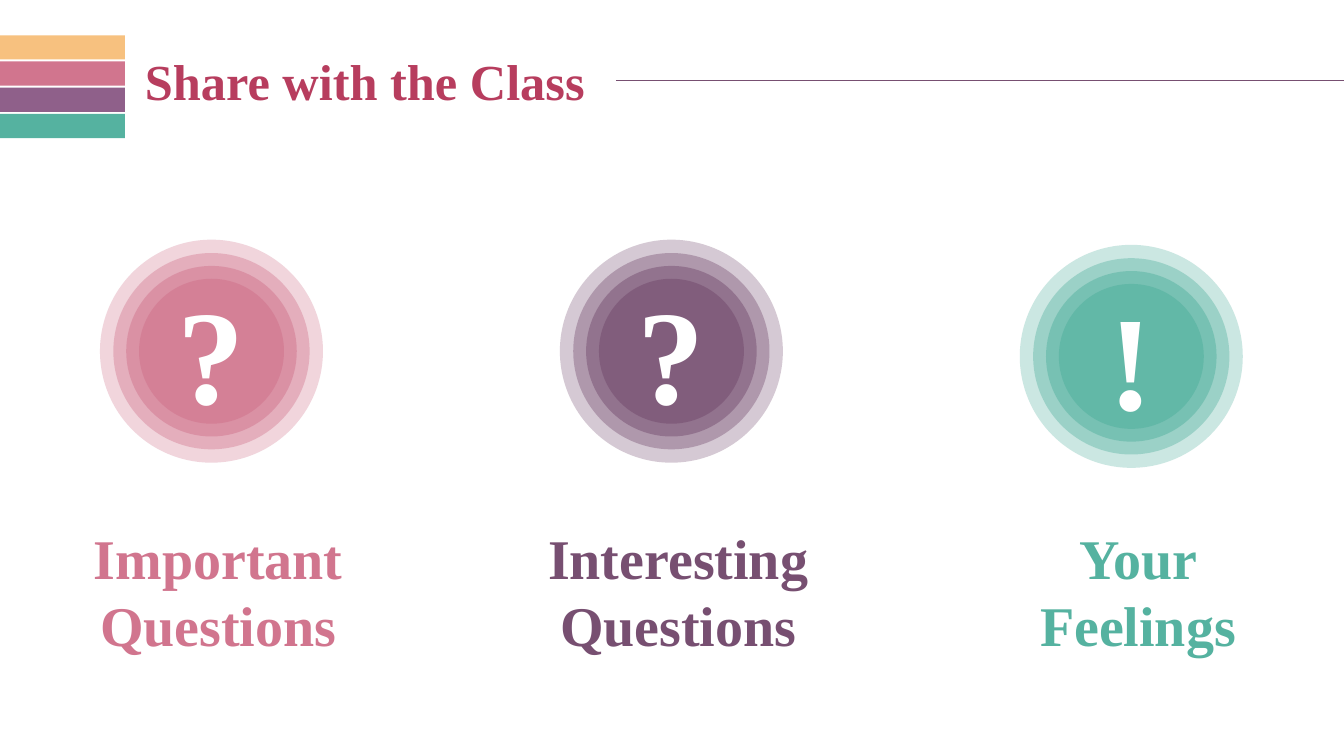
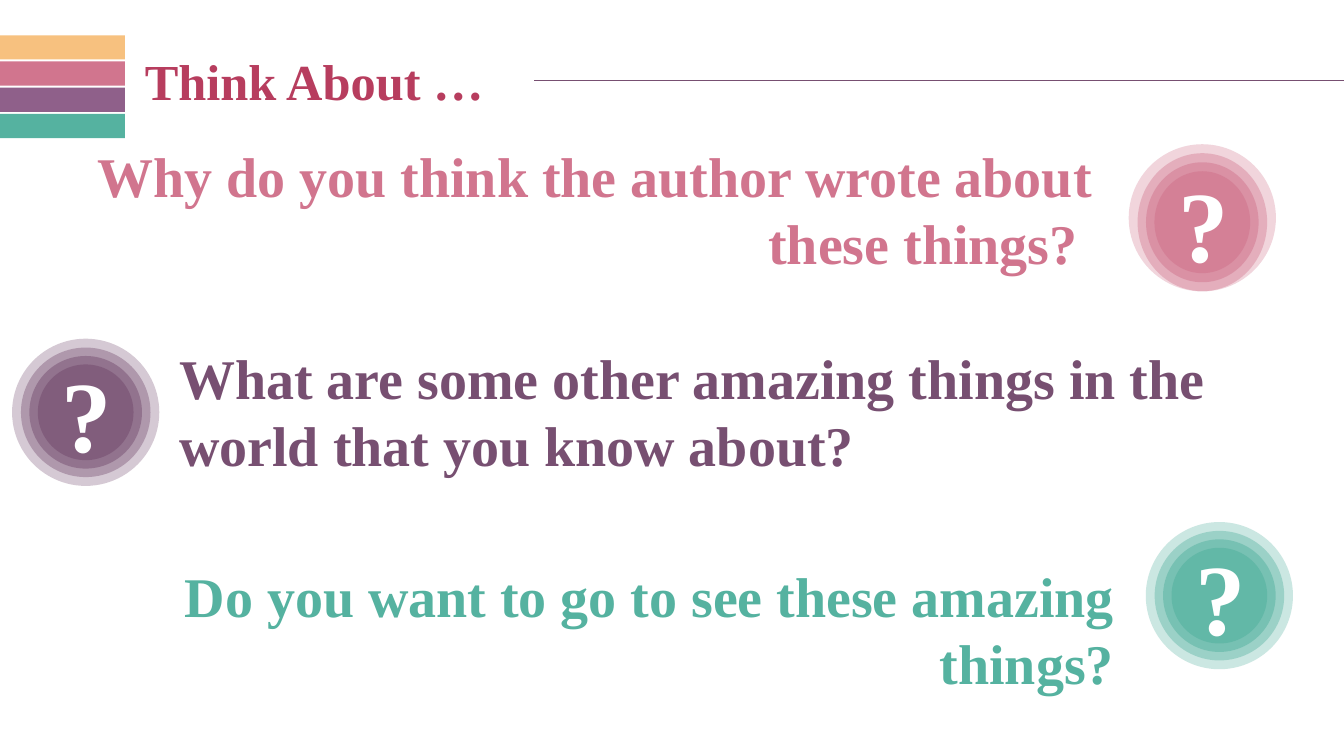
import lxml.etree
import pptx
import pptx.dml.color
import pptx.enum.shapes
import pptx.enum.text
import pptx.oxml.ns
import pptx.util

Cm = pptx.util.Cm
RGBColor = pptx.dml.color.RGBColor
SHAPE = pptx.enum.shapes.MSO_SHAPE
ALIGN = pptx.enum.text.PP_ALIGN
ANCHOR = pptx.enum.text.MSO_ANCHOR
qn = pptx.oxml.ns.qn

FONT = "Times New Roman"
WHITE = RGBColor(0xFF, 0xFF, 0xFF)
CRIMSON = RGBColor(0xB7, 0x3D, 0x5E)
ORANGE = RGBColor(0xF7, 0xC1, 0x7F)
PINK = RGBColor(0xD1, 0x75, 0x8E)
LILAC = RGBColor(0x8F, 0x60, 0x8A)
PURPLE = RGBColor(0x77, 0x4F, 0x71)
TEAL = RGBColor(0x55, 0xB2, 0xA0)

# All lengths are in centimetres.
SLIDE_WIDTH, SLIDE_HEIGHT = 33.87, 19.05
STRIPES = [ORANGE, PINK, LILAC, TEAL]
STRIPE_TOP, STRIPE_WIDTH, STRIPE_HEIGHT, STRIPE_PITCH = 0.89, 3.15, 0.61, 0.66
TITLE_LEFT, TITLE_TOP, TITLE_HEIGHT, RULE_TOP = 3.4, 1.14, 1.8, 2.03
RINGS = [(1, 30), (0.88, 40), (0.765, 50), (0.65, 60)]  # scale, opacity in percent

SHARE_TITLE, SHARE_TITLE_WIDTH = "Share with the Class", 12.12
SHARE_TOPICS = [  # caption, mark, colour, centre height of the badge
    ("Important Questions", "?", PINK, 8.85),
    ("Interesting Questions", "?", PURPLE, 8.85),
    ("Your Feelings", "!", TEAL, 8.98),
]
FIRST_CENTRE, COLUMN_PITCH, SHARE_DIAMETER = 5.33, 11.59, 5.62
CAPTION_SHIFT, CAPTION_TOP, CAPTION_WIDTH, CAPTION_HEIGHT = 0.17, 13.06, 8.1, 3.68

THINK_TITLE, THINK_TITLE_WIDTH = "Think About …", 10.06
THINK_DIAMETER = 3.71
THINK_QUESTIONS = [
    dict(text="Why do you think the author wrote about these things? ",
         color=PINK, align=ALIGN.RIGHT, box=(1.09, 3.43, 26.67, 3.68),
         centre=(30.3, 5.49), stretch=1.065, drop=0.11),
    dict(text="What are some other amazing things in the world that you know about?",
         color=PURPLE, align=ALIGN.LEFT, box=(4.27, 8.53, 29.6, 3.68),
         centre=(2.16, 10.39), stretch=1, drop=0),
    dict(text="Do you want to go to see these amazing things?",
         color=TEAL, align=ALIGN.RIGHT, box=(0, 14.02, 28.32, 1.96),
         centre=(30.73, 15.01), stretch=1, drop=0),
]


def write_text(frame, text, *, size, color, align=ALIGN.LEFT, anchor=ANCHOR.TOP):
    frame.word_wrap = True
    frame.vertical_anchor = anchor
    para = frame.paragraphs[0]
    para.alignment = align
    span = para.add_run()
    span.text = text
    span.font.name = FONT
    span.font.size = pptx.util.Pt(size)
    span.font.bold = True
    span.font.color.rgb = color


def add_text(page, text, bounds, **text_format):
    box = page.shapes.add_textbox(*map(Cm, bounds))
    box.text_frame.auto_size = pptx.enum.text.MSO_AUTO_SIZE.SHAPE_TO_FIT_TEXT
    write_text(box.text_frame, text, **text_format)


def add_plain_shape(shapes, kind, bounds, color, opacity=100):
    shape = shapes.add_shape(kind, *map(Cm, bounds))
    shape.shadow.inherit = False
    shape.line.fill.background()
    shape.fill.solid()
    shape.fill.fore_color.rgb = color
    if opacity < 100:
        fill_color = shape.element.spPr.find(".//" + qn("a:srgbClr"))
        lxml.etree.SubElement(fill_color, qn("a:alpha"), val=str(opacity * 1000))
    return shape


def add_heading(page, title, title_width):
    """Draw the stripes, the title and the rule that runs from it to the slide edge."""
    add_text(page, title, (TITLE_LEFT, TITLE_TOP, title_width, TITLE_HEIGHT),
             size=36, color=CRIMSON)
    stripes = page.shapes.add_group_shape().shapes
    for row, color in enumerate(STRIPES):
        bounds = (0, STRIPE_TOP + row * STRIPE_PITCH, STRIPE_WIDTH, STRIPE_HEIGHT)
        add_plain_shape(stripes, SHAPE.RECTANGLE, bounds, color)
    rule = page.shapes.add_connector(
        pptx.enum.shapes.MSO_CONNECTOR.STRAIGHT,
        Cm(TITLE_LEFT + title_width), Cm(RULE_TOP), Cm(SLIDE_WIDTH), Cm(RULE_TOP))
    rule.line.color.rgb = PURPLE
    rule.line.width = pptx.util.Pt(0.5)
    lxml.etree.SubElement(rule.element.spPr, qn("a:effectLst"))


def add_badge(page, mark, centre, diameter, *, color, size, stretch=1, drop=0):
    """Draw nested rings; stretch and drop make the inner ones taller and lower."""
    rings = page.shapes.add_group_shape().shapes
    for index, (scale, opacity) in enumerate(RINGS):
        width = height = diameter * scale
        x, y = centre
        if index > 0:
            height *= stretch
            y += drop
        bounds = (x - width / 2, y - height / 2, width, height)
        ring = add_plain_shape(rings, SHAPE.OVAL, bounds, color, opacity)
    write_text(ring.text_frame, mark, size=size, color=WHITE,
               align=ALIGN.CENTER, anchor=ANCHOR.MIDDLE)


def build_share_page(page):
    add_heading(page, SHARE_TITLE, SHARE_TITLE_WIDTH)
    for column, (caption, mark, color, y) in enumerate(SHARE_TOPICS):
        x = FIRST_CENTRE + column * COLUMN_PITCH
        caption_left = x + CAPTION_SHIFT - CAPTION_WIDTH / 2
        add_text(page, caption, (caption_left, CAPTION_TOP, CAPTION_WIDTH, CAPTION_HEIGHT),
                 size=40, color=color, align=ALIGN.CENTER)
        add_badge(page, mark, (x, y), SHARE_DIAMETER, color=color, size=96)


def build_think_page(page):
    add_heading(page, THINK_TITLE, THINK_TITLE_WIDTH)
    for question in THINK_QUESTIONS:
        add_text(page, question["text"], question["box"], size=40,
                 color=question["color"], align=question["align"])
        add_badge(page, "?", question["centre"], THINK_DIAMETER, size=72,
                  color=question["color"], stretch=question["stretch"],
                  drop=question["drop"])


def main():
    deck = pptx.Presentation()
    deck.slide_width, deck.slide_height = Cm(SLIDE_WIDTH), Cm(SLIDE_HEIGHT)
    blank = deck.slide_layouts[6]
    for build_page in (build_share_page, build_think_page):
        build_page(deck.slides.add_slide(blank))
    deck.save("out.pptx")


if __name__ == "__main__":
    main()
